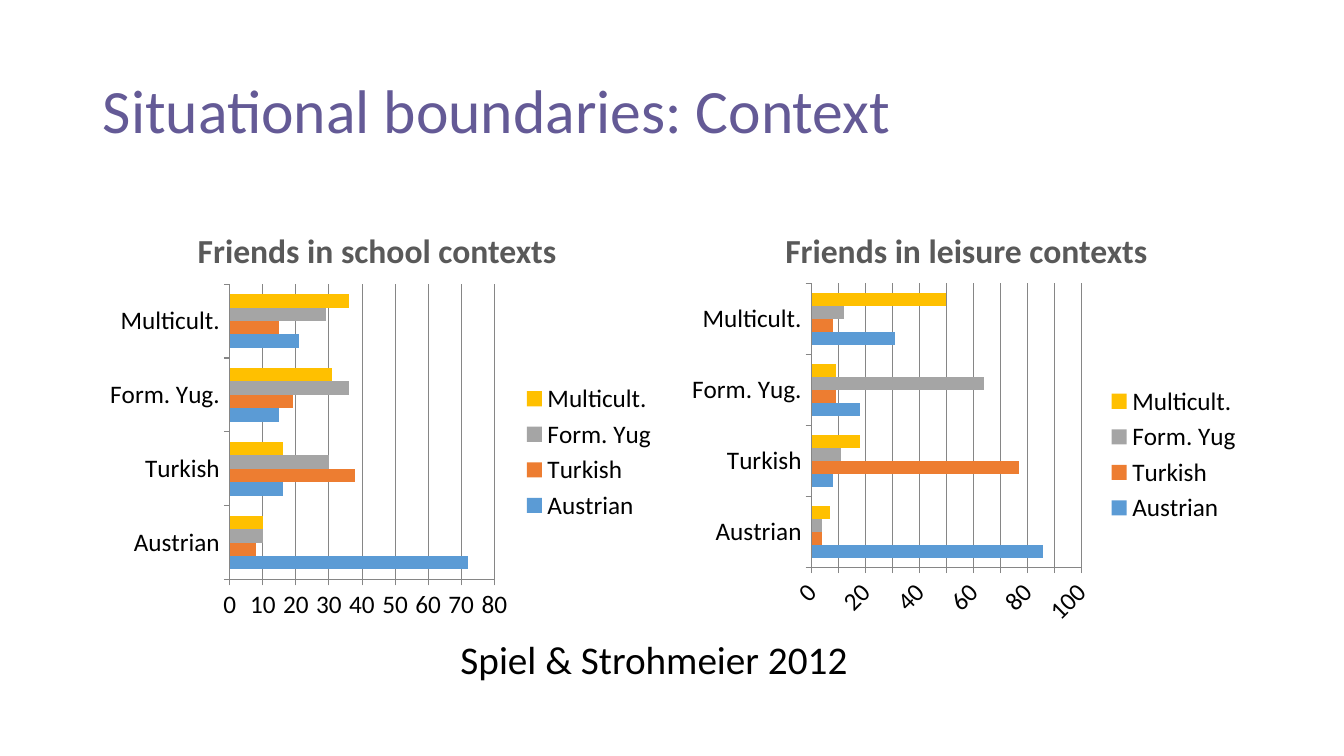
from pptx import Presentation
from pptx.chart.data import CategoryChartData
from pptx.dml.color import RGBColor
from pptx.enum.chart import XL_CHART_TYPE, XL_LEGEND_POSITION, XL_TICK_MARK
from pptx.enum.text import MSO_ANCHOR, MSO_AUTO_SIZE, PP_ALIGN
from pptx.util import Inches, Pt

COLORS = {
    "title": "645A96",
    "heading": "595959",
    "text": "000000",
    "axis": "868686",
    "Austrian": "5B9BD5",
    "Turkish": "ED7D31",
    "Form. Yug": "A5A5A5",
    "Multicult.": "FFC000",
}
GROUPS = ["Austrian", "Turkish", "Form. Yug.", "Multicult."]


def rgb(name):
    return RGBColor.from_string(COLORS[name])


class SlideBuilder:
    """Holds the text style and the current slide."""

    font_name = "Calibri"

    def __init__(self, page):
        self.page = page

    def style_font(self, font, size, color, bold=False):
        values = {"name": self.font_name, "size": Pt(size), "bold": bold}
        for key, value in values.items():
            setattr(font, key, value)
        font.color.rgb = rgb(color)

    def fill_text(self, box, text, size, color, bold=False, **layout):
        frame = box.text_frame
        frame.word_wrap = True
        frame.auto_size = MSO_AUTO_SIZE.NONE
        frame.vertical_anchor = layout.pop("anchor", MSO_ANCHOR.TOP)
        para = frame.paragraphs[0]
        for key, value in {"space_before": Pt(0), **layout}.items():
            setattr(para, key, value)
        span = para.add_run()
        span.text = text
        self.style_font(span.font, size, color, bold)

    def placeholder(self, index, area, text, size, color, **layout):
        box = self.page.placeholders[index]
        for key, value in zip(("left", "top", "width", "height"), area):
            setattr(box, key, Inches(value))
        self.fill_text(box, text, size, color, line_spacing=0.9, **layout)

    def text_box(self, area, text, size, color, **layout):
        box = self.page.shapes.add_textbox(*map(Inches, area))
        self.fill_text(box, text, size, color, **layout)

    def bar_chart(self, area, series):
        data = CategoryChartData()
        data.categories = GROUPS
        for name, values in series.items():
            data.add_series(name, values)
        chart = self.page.shapes.add_chart(
            XL_CHART_TYPE.BAR_CLUSTERED, *map(Inches, area), data).chart
        self.style_font(chart.font, 18, "text")
        chart.has_title = False

        # Legend
        chart.has_legend = True
        chart.legend.position = XL_LEGEND_POSITION.RIGHT
        chart.legend.include_in_layout = False

        # Bars
        plot = chart.plots[0]
        plot.gap_width = 150
        plot.vary_by_categories = False
        for bars in plot.series:
            bars.format.fill.solid()
            bars.format.fill.fore_color.rgb = rgb(bars.name)

        # Axes and grid
        chart.value_axis.has_major_gridlines = True
        lines = [chart.value_axis.major_gridlines.format.line]
        for axis in (chart.category_axis, chart.value_axis):
            axis.major_tick_mark = XL_TICK_MARK.OUTSIDE
            axis.minor_tick_mark = XL_TICK_MARK.NONE
            lines.append(axis.format.line)
        for line in lines:
            line.color.rgb = rgb("axis")
            line.width = Pt(0.75)

    def remove_placeholders(self, *indexes):
        for index in indexes:
            element = self.page.placeholders[index].element
            element.getparent().remove(element)


def main():
    deck = Presentation()
    deck.slide_width, deck.slide_height = Inches(13.33), Inches(7.5)
    comparison = deck.slide_layouts.get_by_name("Comparison")
    builder = SlideBuilder(deck.slides.add_slide(comparison))
    builder.remove_placeholders(2, 4)

    # Title
    builder.placeholder(0, (0.92, 0.4, 11.5, 1.45),
                        "Situational boundaries: Context", 44, "title",
                        anchor=MSO_ANCHOR.MIDDLE, alignment=PP_ALIGN.LEFT)

    # Headings with their charts
    panels = [
        (1, "Friends in school contexts", (0.92, 1.84, 5.64, 0.9),
         (0.98, 2.75, 5.64, 3.47),
         {"Austrian": (72, 16, 15, 21), "Turkish": (8, 38, 19, 15),
          "Form. Yug": (10, 30, 36, 29), "Multicult.": (10, 16, 31, 36)}),
        (3, "Friends in leisure contexts", (6.75, 1.84, 5.67, 0.9),
         (6.75, 2.74, 5.67, 3.54),
         {"Austrian": (86, 8, 18, 31), "Turkish": (4, 77, 9, 8),
          "Form. Yug": (4, 11, 64, 12), "Multicult.": (7, 18, 9, 50)}),
    ]
    for index, heading, heading_area, chart_area, series in panels:
        builder.placeholder(index, heading_area, heading, 24, "heading",
                            bold=True, anchor=MSO_ANCHOR.BOTTOM,
                            alignment=PP_ALIGN.CENTER)
        builder.bar_chart(chart_area, series)

    # Source
    builder.text_box((4.24, 6.25, 4.49, 0.57), "Spiel & Strohmeier 2012",
                     28, "text", alignment=PP_ALIGN.CENTER)

    deck.save("out.pptx")


if __name__ == "__main__":
    main()
